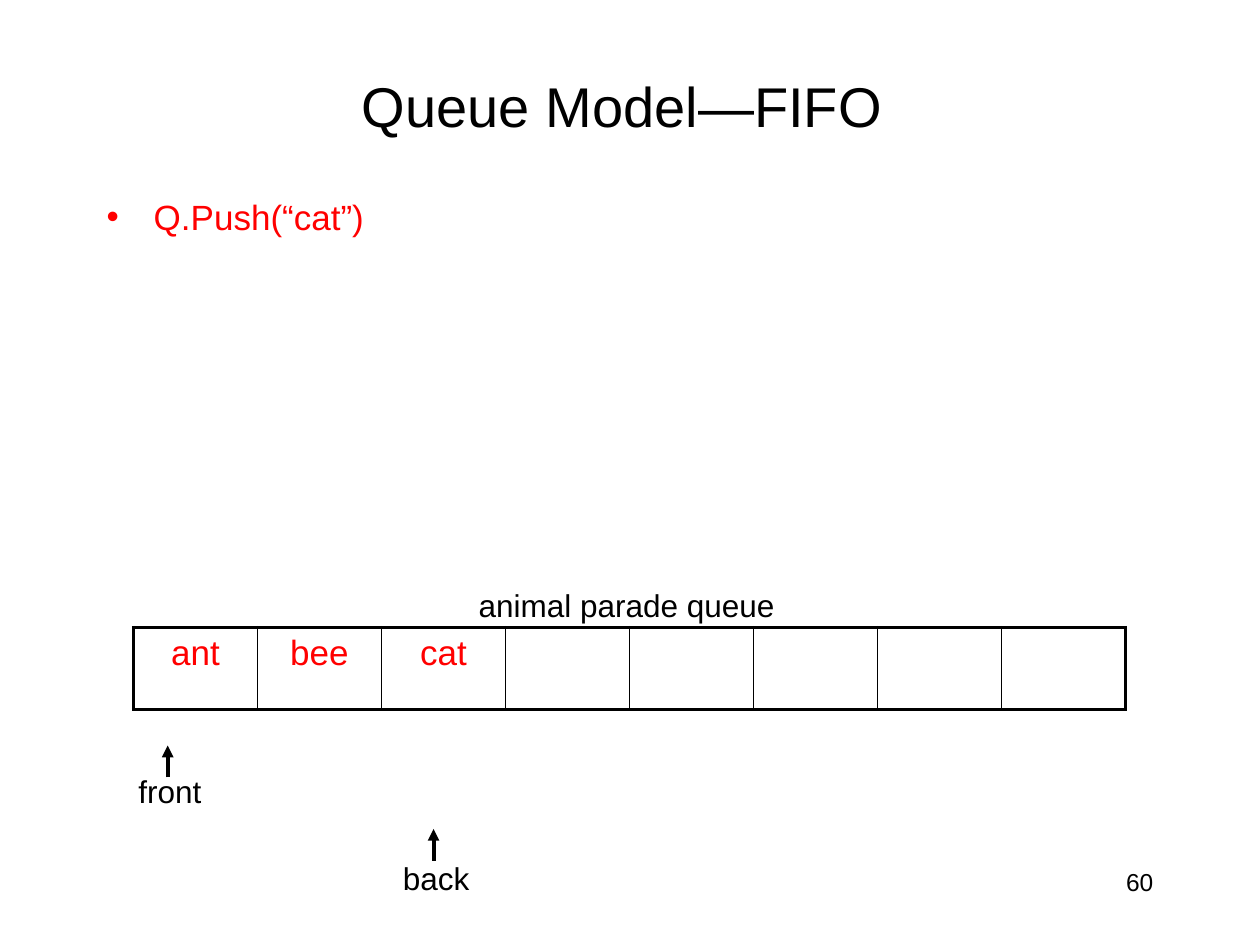
"""Build the queue model slide: a FIFO queue of animals with front and back markers."""
import pptx
import pptx.dml.color
import pptx.enum.shapes
import pptx.enum.text
import pptx.oxml
import pptx.oxml.ns
import pptx.util
from pptx.util import Cm

COLORS = {"ink": "000000", "accent": "FF0000"}
ALIGN = pptx.enum.text.PP_ALIGN
ANCHOR = pptx.enum.text.MSO_ANCHOR
NS = pptx.oxml.ns.nsdecls("a")


def write(tf, text, size=18, color="ink", align=ALIGN.LEFT, anchor=ANCHOR.TOP, wrap=True, bullet=False):
    tf.word_wrap = wrap
    tf.vertical_anchor = anchor
    p = tf.paragraphs[0]
    p.alignment = align
    if bullet:
        pPr = p._p.get_or_add_pPr()
        pPr.set("marL", str(Cm(0.95)))
        pPr.set("indent", str(-Cm(0.95)))
        pPr.append(pptx.oxml.parse_xml(f'<a:buFont {NS} typeface="Arial"/>'))
        pPr.append(pptx.oxml.parse_xml(f'<a:buChar {NS} char="•"/>'))
    r = p.add_run()
    r.text = text
    r.font.name = "Arial"
    r.font.size = pptx.util.Pt(size)
    r.font.color.rgb = pptx.dml.color.RGBColor.from_string(COLORS[color])


prs = pptx.Presentation()
prs.slide_width, prs.slide_height = Cm(25.4), Cm(19.05)
s = prs.slides.add_slide(prs.slide_layouts[6])

boxes = [
    ((18.2, 17.35, 5.3, 1.27), "60", dict(size=14, align=ALIGN.RIGHT)),
    ((1.9, 1.06, 21.6, 2.12), "Queue Model—FIFO ", dict(size=32, align=ALIGN.CENTER, anchor=ANCHOR.MIDDLE)),
    ((1.9, 3.81, 21.6, 6.35), "Q.Push(“cat”)", dict(size=20, color="accent", bullet=True)),
    ((9.4, 11.68, 6.48, 1.02), "animal parade queue", dict(wrap=False)),
    ((2.54, 15.44, 1.78, 1.02), "front", dict(wrap=False)),
    ((7.87, 17.2, 1.85, 1.02), "back", dict(wrap=False)),
]
for box, text, style in boxes:
    sp = s.shapes.add_textbox(*map(Cm, box))
    write(sp.text_frame, text, **style)

animals = ["ant", "bee", "cat"]
slots = 8
table = s.shapes.add_table(1, slots, Cm(2.69), Cm(12.65), Cm(20), Cm(1.65)).table
table.first_row = table.horz_banding = False
for i in range(slots):
    cell = table.cell(0, i)
    cell.fill.background()
    if i < len(animals):
        write(cell.text_frame, animals[i], size=20, color="accent", align=ALIGN.CENTER)
    widths = {"L": 2.25 if i == 0 else 1, "R": 2.25 if i == slots - 1 else 1, "T": 2.25, "B": 2.25}
    for k, (side, width) in enumerate(widths.items()):
        cell._tc.get_or_add_tcPr().insert(k, pptx.oxml.parse_xml(
            f'<a:ln{side} {NS} w="{pptx.util.Pt(width)}"><a:solidFill>'
            f'<a:srgbClr val="{COLORS["ink"]}"/></a:solidFill></a:ln{side}>'))

for x, y in [(3.38, 15.67), (8.74, 17.35)]:
    sp = s.shapes.add_connector(pptx.enum.shapes.MSO_CONNECTOR.STRAIGHT, Cm(x), Cm(y), Cm(x), Cm(y - 0.64))
    sp.line.color.rgb = pptx.dml.color.RGBColor.from_string(COLORS["ink"])
    sp.line.width = pptx.util.Pt(2.25)
    sp.line._get_or_add_ln().append(pptx.oxml.parse_xml(f'<a:tailEnd {NS} type="triangle"/>'))
    sp._element.spPr.append(pptx.oxml.parse_xml(f"<a:effectLst {NS}/>"))

prs.save("out.pptx")
